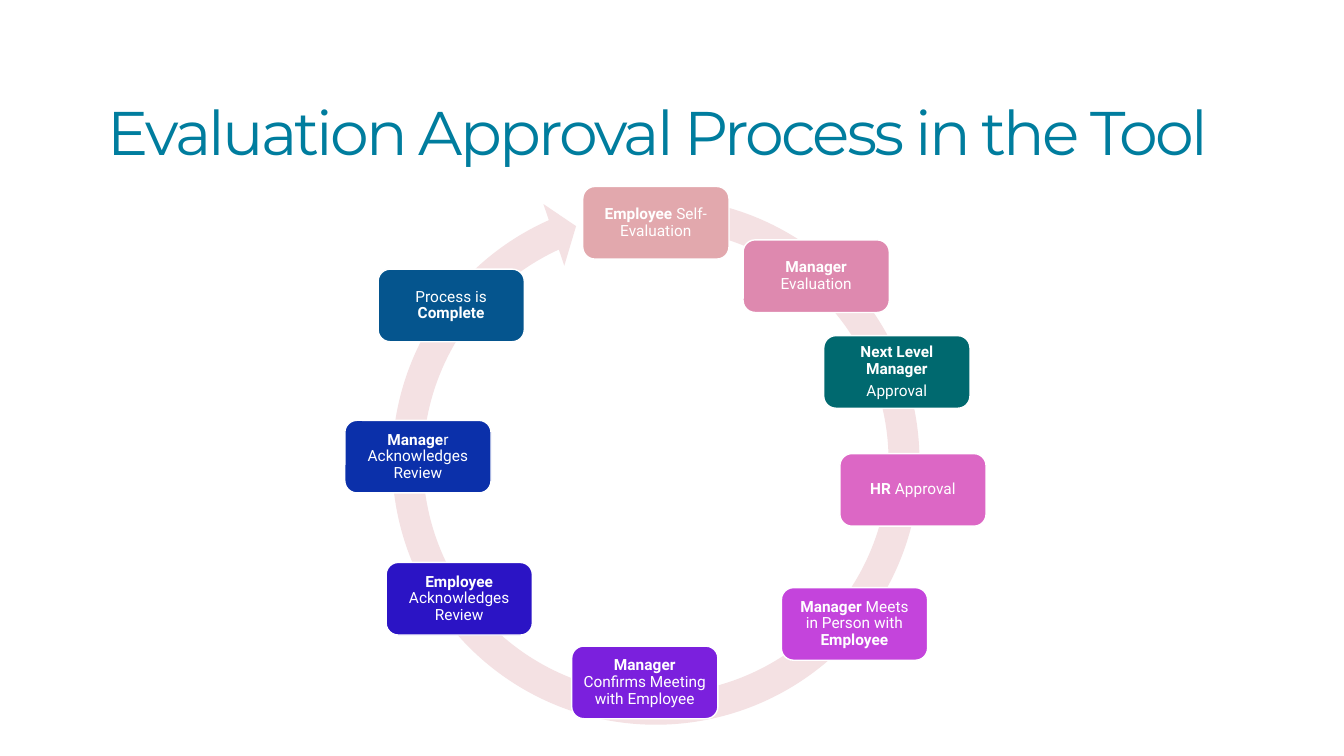
from lxml.etree import SubElement
from pptx import Presentation
from pptx.dml.color import RGBColor
from pptx.enum.shapes import MSO_SHAPE as Shape
from pptx.enum.text import MSO_ANCHOR as Anchor, PP_ALIGN as Align
from pptx.util import Inches, Pt

TITLE = "Evaluation Approval Process in the Tool"
TITLE_BOX = (0.97, 0.58, 11.86, 1.53)
RING_LEFT, RING_TOP, RING_SIZE = 3.72, 1.79, 5.57
RING_ADJUST = (0.055, 3.307, 147.448, 168.202, 0.058)
BOX_W, BOX_H, INSET = 1.45, 0.72, 0.08

# fill, offset of the box centre from the ring centre, paragraphs of (text, bold)
STEPS = [
    ("E2A8AD", (0, -2.365), [[("Employee", True), (" Self-Evaluation", False)]]),
    ("DE89AF", (1.59, -1.835), [[("Manager", True), (" Evaluation", False)]]),
    ("DC67C5", (2.55, 0.285), [[("HR ", True), ("Approval", False)]]),
    ("C444DC", (1.97, 1.615), [[("Manager", True), (" Meets in Person with ", False),
                                ("Employee", True)]]),
    ("7B20DD", (-0.11, 2.195), [[("Manager", True),
                                 (" Confirms Meeting with Employee", False)]]),
    ("2B14C5", (-1.95, 1.365), [[("Employee", True), (" Acknowledges Review", False)]]),
    ("0B30AA", (-2.36, -0.045), [[("Manage", True), ("r Acknowledges Review", False)]]),
    ("05558E", (-2.03, -1.545), [[("Process is ", False), ("Complete", True)]]),
    ("00696F", (2.39, -0.885), [[("Next Level Manager", True)], [("Approval", False)]]),
]


def color(hex_string):
    return RGBColor.from_string(hex_string)


def style_font(font, name, size, hex_string):
    font.name, font.size = name, Pt(size)
    font.color.rgb = color(hex_string)


def add_filled(slide, kind, box, fill):
    sp = slide.shapes.add_shape(kind, *map(Inches, box))
    sp.shadow.inherit = False
    sp.fill.solid()
    sp.fill.fore_color.rgb = color(fill)
    return sp


def add_title(slide):
    tf = slide.shapes.add_textbox(*map(Inches, TITLE_BOX)).text_frame
    tf.word_wrap = True
    tf.vertical_anchor = Anchor.MIDDLE
    p = tf.paragraphs[0]
    p.line_spacing = 0.9
    r = p.add_run()
    r.text = TITLE
    style_font(r.font, "Montserrat", 44, "007D9E")
    r.font._element.set("spc", "-200")


def add_ring(slide):
    sp = add_filled(slide, Shape.CIRCULAR_ARROW,
                    (RING_LEFT, RING_TOP, RING_SIZE, RING_SIZE), "F4E1E3")
    sp.line.fill.background()
    for i, value in enumerate(RING_ADJUST):
        sp.adjustments[i] = value


def add_step(slide, fill, offset, paragraphs):
    left = RING_LEFT + RING_SIZE / 2 + offset[0] - BOX_W / 2
    top = RING_TOP + RING_SIZE / 2 + offset[1] - BOX_H / 2
    sp = add_filled(slide, Shape.ROUNDED_RECTANGLE, (left, top, BOX_W, BOX_H), fill)
    sp.line.color.rgb = color("FFFFFF")
    sp.line.width = Pt(1)
    tf = sp.text_frame
    tf.word_wrap = True
    tf.vertical_anchor = Anchor.MIDDLE
    tf.margin_left = tf.margin_right = Inches(INSET)
    tf.margin_top = tf.margin_bottom = Inches(INSET)
    for i, runs in enumerate(paragraphs):
        p = tf.add_paragraph() if i else tf.paragraphs[0]
        p.alignment = Align.CENTER
        p.line_spacing = 0.9
        p.space_after = Pt(3.85)
        style_font(p.font, "Roboto", 11, "FFFFFF")
        for text, bold in runs:
            r = p.add_run()
            r.text, r.font.bold = text, bold


def main():
    prs = Presentation()
    prs.slide_width, prs.slide_height = Inches(13.33), Inches(7.5)
    slide = prs.slides.add_slide(prs.slide_layouts[6])
    add_title(slide)
    add_ring(slide)
    for step in STEPS:
        add_step(slide, *step)
    prs.save("out.pptx")


if __name__ == "__main__":
    main()
